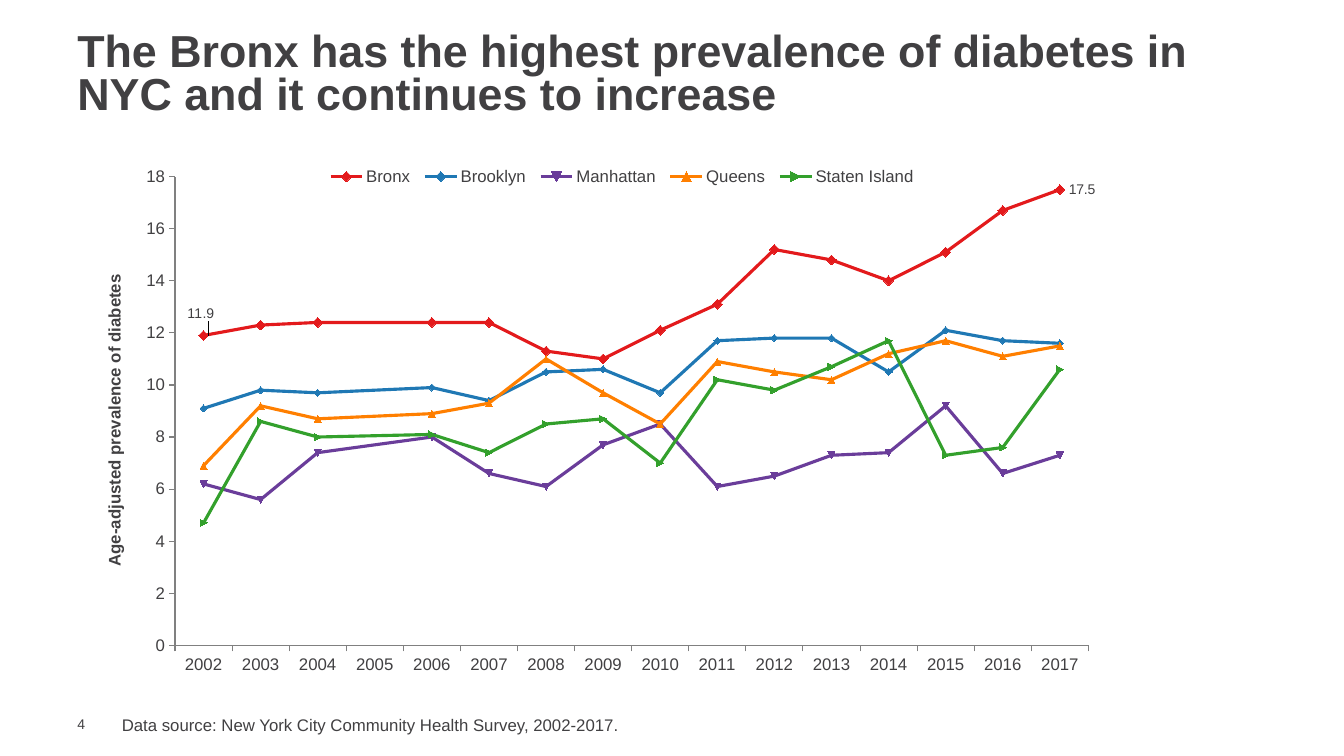
from lxml import etree
from pptx import Presentation
from pptx import util as u
from pptx.chart import data as cd
from pptx.dml.color import RGBColor
from pptx.enum import chart as ec, text as et
from pptx.oxml import parse_xml

FONT = "Arial"
INK = RGBColor(0x41, 0x40, 0x42)
AXIS = RGBColor(0x80, 0x80, 0x80)
RED = RGBColor(0xE3, 0x1A, 0x1C)
BLUE = RGBColor(0x1F, 0x78, 0xB4)
PURPLE = RGBColor(0x6A, 0x3D, 0x9A)
ORANGE = RGBColor(0xFF, 0x7F, 0x00)
GREEN = RGBColor(0x33, 0xA0, 0x2C)
AUTO, DIAMOND = ec.XL_MARKER_STYLE.AUTOMATIC, ec.XL_MARKER_STYLE.DIAMOND

TEXTS = [
    dict(text="4", at=(1.7, 18.03, 1.09, 0.43), insets=(0.25, 0, 0, 0),
         anchor=et.MSO_ANCHOR.MIDDLE, spacing=1.0, font=dict(size=u.Pt(10))),
    dict(text="The Bronx has the highest prevalence of diabetes in NYC and it continues to increase",
         at=(1.7, 0.71, 30.2, 2.44), insets=(0.25, 0.13, 0.25, 0.13),
         anchor=et.MSO_ANCHOR.MIDDLE, spacing=0.8, font=dict(size=u.Pt(32), bold=True)),
    dict(text="Data source: New York City Community Health Survey, 2002-2017.",
         at=(2.82, 17.88, 24.66, 0.76), insets=(0.25, 0.13, 0.25, 0.13),
         anchor=et.MSO_ANCHOR.TOP, spacing=1.0, font=dict(size=u.Pt(12))),
]
YEARS = [str(y) for y in range(2002, 2018)]
BOROUGHS = [
    ("Bronx", RED, DIAMOND, 7,
     [11.9, 12.3, 12.4, None, 12.4, 12.4, 11.3, 11, 12.1, 13.1, 15.2, 14.8, 14, 15.1, 16.7, 17.5]),
    ("Brooklyn", BLUE, AUTO, 5,
     [9.1, 9.8, 9.7, None, 9.9, 9.4, 10.5, 10.6, 9.7, 11.7, 11.8, 11.8, 10.5, 12.1, 11.7, 11.6]),
    ("Manhattan", PURPLE, AUTO, 5,
     [6.2, 5.6, 7.4, None, 8, 6.6, 6.1, 7.7, 8.5, 6.1, 6.5, 7.3, 7.4, 9.2, 6.6, 7.3]),
    ("Queens", ORANGE, AUTO, 5,
     [6.9, 9.2, 8.7, None, 8.9, 9.3, 11, 9.7, 8.5, 10.9, 10.5, 10.2, 11.2, 11.7, 11.1, 11.5]),
    ("Staten Island", GREEN, AUTO, 5,
     [4.7, 8.6, 8, None, 8.1, 7.4, 8.5, 8.7, 7, 10.2, 9.8, 10.7, 11.7, 7.3, 7.6, 10.6]),
]
CHART_AT = (2.54, 4.09, 25.27, 12.9)
PLOT = dict(layoutTarget="inner", xMode="edge", yMode="edge", x=0.074, y=0.028, w=0.911, h=0.916)
LEGEND = dict(xMode="edge", yMode="edge", x=0.22, y=0.003, w=0.6, h=0.05)
FIRST_LABEL = dict(x=-0.025, y=-0.043)
C_NS = "http://schemas.openxmlformats.org/drawingml/2006/chart"


def set_font(font, **extra):
    font.color.rgb = INK
    for key, value in {"name": FONT, "size": u.Pt(12), "bold": False, **extra}.items():
        setattr(font, key, value)


def layout(values):
    el = parse_xml(f'<c:layout xmlns:c="{C_NS}"><c:manualLayout/></c:layout>')
    for key, value in values.items():
        etree.SubElement(el[0], f"{{{C_NS}}}{key}").set("val", str(value))
    return el


def place(parent, values, after=None):
    for old in parent.findall(f"{{{C_NS}}}layout"):
        parent.remove(old)
    if after is None:
        parent.insert(0, layout(values))
    else:
        parent.find(f"{{{C_NS}}}{after}").addnext(layout(values))


def add_text(slide, item):
    tf = slide.shapes.add_textbox(*map(u.Cm, item["at"])).text_frame
    tf.word_wrap = True
    tf.vertical_anchor = item["anchor"]
    for side, inset in zip(("left", "top", "right", "bottom"), item["insets"]):
        setattr(tf, f"margin_{side}", u.Cm(inset))
    p = tf.paragraphs[0]
    p.line_spacing = item["spacing"]
    r = p.add_run()
    r.text = item["text"]
    set_font(r.font, **item["font"])


def add_borough_chart(slide):
    data = cd.CategoryChartData(number_format="General")
    data.categories = YEARS
    for name, _, _, _, values in BOROUGHS:
        data.add_series(name, values)
    chart = slide.shapes.add_chart(
        ec.XL_CHART_TYPE.LINE_MARKERS, *map(u.Cm, CHART_AT), data).chart
    set_font(chart.font, size=u.Pt(10))
    chart.has_title = False
    chart.has_legend = True
    chart.legend.position = ec.XL_LEGEND_POSITION.TOP
    chart.legend.include_in_layout = False
    set_font(chart.legend.font)
    chart.plots[0].vary_by_categories = False

    for axis in (chart.category_axis, chart.value_axis):
        axis.has_major_gridlines = False
        axis.major_tick_mark = ec.XL_TICK_MARK.OUTSIDE
        axis.format.line.color.rgb = AXIS
        axis.format.line.width = u.Pt(0.75)
        set_font(axis.tick_labels.font)
    va = chart.value_axis
    va.minimum_scale, va.maximum_scale, va.major_unit = 0, 18, 2
    va.tick_labels.number_format = "#,##0"
    va.tick_labels.number_format_is_linked = False
    tf = va.axis_title.text_frame
    tf.text = "Age-adjusted prevalence of diabetes"
    set_font(tf.paragraphs[0].runs[0].font, bold=True)

    for series, (_, color, symbol, size, _) in zip(chart.plots[0].series, BOROUGHS):
        series.smooth = False
        series.format.line.color.rgb = color
        series.format.line.width = u.Pt(2.25)
        series.marker.style, series.marker.size = symbol, size
        series.marker.format.fill.solid()
        series.marker.format.fill.fore_color.rgb = color
        series.marker.format.line.color.rgb = color

    bronx = chart.plots[0].series[0]
    for idx in (0, len(YEARS) - 1):
        label = bronx.points[idx].data_label
        label.position = ec.XL_LABEL_POSITION.RIGHT
        set_font(label.font, size=u.Pt(10))
    bronx.data_labels.show_value = False

    c = chart.element.find(f"{{{C_NS}}}chart")
    place(c.plotArea, PLOT)
    place(c.find(f"{{{C_NS}}}legend"), LEGEND, "legendPos")
    place(c.find(f".//{{{C_NS}}}dLbl"), FIRST_LABEL, "idx")
    c.find(f"{{{C_NS}}}dispBlanksAs").set("val", "span")


def main():
    prs = Presentation()
    prs.slide_width, prs.slide_height = u.Cm(33.87), u.Cm(19.05)
    slide = prs.slides.add_slide(prs.slide_layouts[6])
    for item in TEXTS:
        add_text(slide, item)
    add_borough_chart(slide)
    prs.save("out.pptx")


if __name__ == "__main__":
    main()
